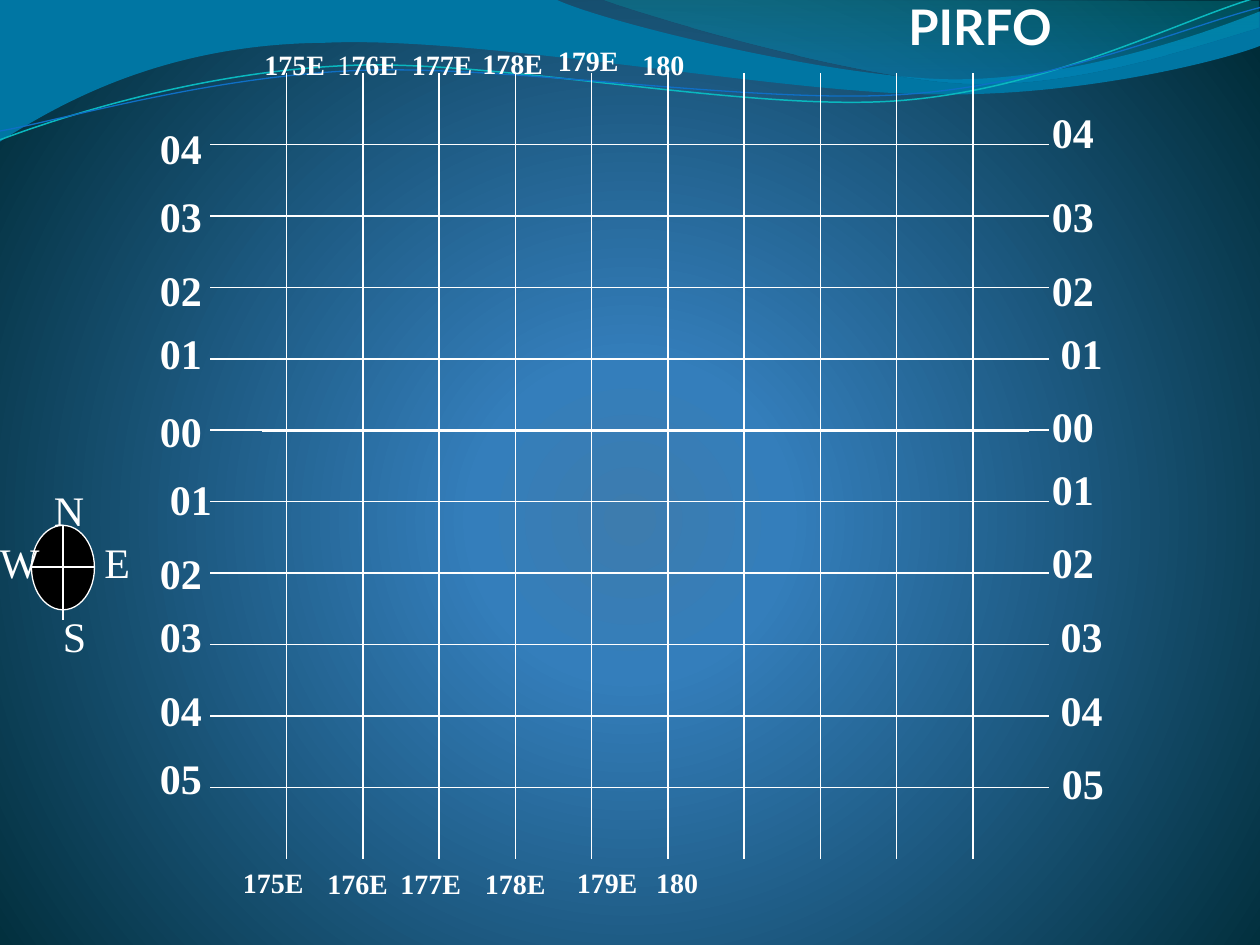
from typing import NamedTuple

from lxml import etree
from pptx import Presentation, util as u
from pptx.dml.color import RGBColor
from pptx.enum import shapes, text
from pptx.oxml import parse_xml
from pptx.oxml.ns import nsdecls, qn

PX = 9144  # EMU per px, 100 px to the inch
WHITE = RGBColor(0xFF, 0xFF, 0xFF)
BLACK = RGBColor(0x00, 0x00, 0x00)
WAVE_BLUE = RGBColor(0x00, 0x76, 0xA3)
CYAN = RGBColor(0x0A, 0xB8, 0xBF)
ROYAL = RGBColor(0x0F, 0x6F, 0xC6)
GLOW = RGBColor(0x3D, 0x7C, 0xAE)
MID_BLUE = RGBColor(0x34, 0x7E, 0xBB)
NIGHT = RGBColor(0x00, 0x2C, 0x38)
TEAL = RGBColor(0x00, 0xA1, 0xA9)
SKY = RGBColor(0x00, 0x8B, 0xBF)
SERIF = "Times New Roman"
GRID_SIZE = 11


class Stop(NamedTuple):
    percent: int
    color: RGBColor
    alpha: int = 100


class Wave(NamedTuple):
    """Start point, then segments of 2 (line) or 6 (Bezier) px coordinates."""
    start: tuple[int, int]
    segments: list[tuple[int, ...]]
    fill: RGBColor | None = None
    line: RGBColor | None = None
    weight: float = 0


class Label(NamedTuple):
    """Bold text whose first `plain` letters stay regular."""
    left: int
    top: int
    width: int
    words: str
    size: int
    wrap: bool = True
    plain: int = 0


WAVES = [
    Wave((0, -1), [(440, -1), (476, 17, 664, 63, 758, 63), (853, 63, 958, 26, 1000, 9),
                   (1001, 36), (983, 44, 870, 76, 746, 75), (622, 75, 382, 28, 257, 34),
                   (129, 35, 46, 83, -1, 113)], fill=WAVE_BLUE),
    Wave((478, 0), [(509, 12, 681, 63, 768, 66), (855, 70, 961, 33, 999, 22), (999, 1)],
         fill=TEAL),
    Wave((0, 111), [(48, 93, 158, 57, 277, 52), (395, 47, 593, 89, 713, 80),
                    (833, 71, 938, 15, 998, -2)], line=CYAN, weight=0.85),
    Wave((0, 104), [(47, 96, 164, 61, 283, 56), (403, 51, 597, 83, 717, 75),
                    (836, 67, 941, 21, 1000, 6)], line=ROYAL, weight=0.75),
]
LABELS = [
    # longitudes, top
    Label(200, 33, 68, "175E", 16), Label(258, 33, 77, "176E", 16, plain=1),
    Label(317, 33, 68, "177E", 16), Label(373, 32, 68, "178E", 16, wrap=False),
    Label(433, 30, 102, "179E", 16), Label(500, 33, 83, "180", 16),
    # longitudes, bottom
    Label(183, 682, 83, "175E", 16), Label(250, 683, 77, "176E", 16),
    Label(308, 683, 100, "177E", 16), Label(375, 683, 92, "178E", 16),
    Label(448, 682, 68, "179E", 16, wrap=False), Label(511, 682, 81, "180", 16),
    # latitudes, left
    Label(117, 92, 62, "04", 24), Label(117, 146, 68, "03", 24),
    Label(117, 205, 68, "02", 24), Label(117, 255, 60, "01", 24),
    Label(117, 317, 60, "00", 24), Label(125, 371, 68, "01", 24),
    Label(117, 430, 68, "02", 24), Label(117, 480, 77, "03", 24),
    Label(117, 538, 68, "04", 24), Label(117, 592, 60, "05", 24),
    # latitudes, right
    Label(825, 80, 75, "04", 24), Label(825, 146, 75, "03", 24),
    Label(825, 205, 58, "02", 24), Label(832, 255, 53, "01", 24, wrap=False),
    Label(825, 313, 67, "00", 24), Label(825, 363, 75, "01", 24),
    Label(825, 421, 67, "02", 24), Label(832, 480, 53, "03", 24, wrap=False),
    Label(832, 538, 53, "04", 24, wrap=False), Label(833, 596, 67, "05", 24),
]
COMPASS_LETTERS = [
    Label(33, 380, 51, "N", 24, plain=1), Label(73, 421, 40, "E", 24, False, 1),
    Label(40, 480, 39, "S", 24, False, 1), Label(-10, 421, 52, "W", 24, False, 1),
]


def px(*lengths: int) -> list[u.Emu]:
    return [u.Emu(length * PX) for length in lengths]


def set_gradient(fill, owner, stops: list[Stop], shade: str) -> None:
    """Give the fill inside the XML element `owner` a gradient with the given shading."""
    fill.solid()
    solid = next(owner.iter(qn("a:solidFill")))
    marks = "".join(
        f'<a:gs pos="{stop.percent * 1000}"><a:srgbClr val="{stop.color}">'
        f'<a:alpha val="{stop.alpha * 1000}"/></a:srgbClr></a:gs>' for stop in stops)
    solid.getparent().replace(solid, parse_xml(
        f'<a:gradFill rotWithShape="1" {nsdecls("a")}><a:gsLst>{marks}</a:gsLst>'
        f'{shade}</a:gradFill>'))


def bend(shape, segments: list[tuple[int, ...]]) -> None:
    """Merge the three straight steps of each Bezier segment into one curve."""
    steps = iter(list(shape._element.iter(qn("a:lnTo"))))
    for segment in segments:
        first = next(steps)
        if len(segment) == 6:
            first.tag = qn("a:cubicBezTo")
            for _ in range(2):
                step = next(steps)
                step.getparent().remove(step)
                first.append(step[0])


def draw_wave(page, wave: Wave):
    points = [segment[i:i + 2] for segment in wave.segments for i in range(0, len(segment), 2)]
    builder = page.shapes.build_freeform(*wave.start, scale=PX)
    builder.add_line_segments(points, close=wave.fill is not None)
    shape = builder.convert_to_shape()
    bend(shape, wave.segments)
    shape.shadow.inherit = False
    if wave.fill is None:
        shape.fill.background()
        shape.line.color.rgb = wave.line
        shape.line.width = u.Pt(wave.weight)
    else:
        shape.fill.solid()
        shape.fill.fore_color.rgb = wave.fill
        shape.line.fill.background()
    return shape


def draw_ring(page) -> None:
    ring = page.shapes.add_shape(shapes.MSO_SHAPE.DONUT, *px(-6, -3, 88, 87))
    ring.adjustments[0] = 0.175
    ring.shadow.inherit = False
    ring.fill.solid()
    ring.fill.fore_color.rgb = WAVE_BLUE
    ring.line.fill.background()


def draw_title(page, words: str) -> None:
    title = page.shapes.title
    title.left, title.top, title.width, title.height = px(711, -8, 150, 57)
    frame = title.text_frame
    frame.text = words
    frame.vertical_anchor = text.MSO_ANCHOR.TOP
    frame.auto_size = text.MSO_AUTO_SIZE.NONE
    para = frame.paragraphs[0]
    para.alignment = text.PP_ALIGN.LEFT
    para.font.name, para.font.size, para.font.bold = "Lato", u.Pt(28), True
    para.font.color.rgb = WHITE
    page.shapes._spTree.append(title._element)  # in front of the waves


def set_border(cell, side: str, visible: bool) -> None:
    border = etree.SubElement(cell._tc.get_or_add_tcPr(), qn(f"a:ln{side}"), w=str(u.Pt(1)))
    if visible:
        paint = etree.SubElement(border, qn("a:solidFill"))
        etree.SubElement(paint, qn("a:srgbClr"), val=str(WHITE))
    else:
        etree.SubElement(border, qn("a:noFill"))


def draw_grid(page) -> None:
    """Table ruled on the inside only."""
    table = page.shapes.add_table(GRID_SIZE, GRID_SIZE, *px(167, 58, 666, 624)).table
    table.first_row = table.horz_banding = False
    last = GRID_SIZE - 1
    for row in range(GRID_SIZE):
        for column in range(GRID_SIZE):
            cell = table.cell(row, column)
            inner = {"L": column > 0, "R": column < last, "T": row > 0, "B": row < last}
            for side, visible in inner.items():
                set_border(cell, side, visible)
            cell.fill.background()


def draw_label(page, label: Label) -> None:
    height = 37 if label.size == 16 else 50
    box = page.shapes.add_textbox(*px(label.left, label.top, label.width, height))
    frame = box.text_frame
    frame.word_wrap = label.wrap
    frame.auto_size = text.MSO_AUTO_SIZE.SHAPE_TO_FIT_TEXT
    para = frame.paragraphs[0]
    para.font.name, para.font.size = SERIF, u.Pt(label.size)
    para.font.color.rgb = WHITE
    for words, bold in ((label.words[:label.plain], False), (label.words[label.plain:], True)):
        if words:
            span = para.add_run()
            span.text, span.font.bold = words, bold


def draw_line(page, *ends: int) -> None:
    line = page.shapes.add_connector(shapes.MSO_CONNECTOR.STRAIGHT, *px(*ends))
    line.line.color.rgb = WHITE
    line.line.width = u.Pt(0.75)
    etree.SubElement(line._element.spPr, qn("a:effectLst"))


def draw_compass(page) -> None:
    dial = page.shapes.add_shape(shapes.MSO_SHAPE.OVAL, *px(25, 417, 50, 67))
    dial.shadow.inherit = False
    dial.fill.solid()
    dial.fill.fore_color.rgb = BLACK
    dial.line.color.rgb = WHITE
    dial.line.width = u.Pt(0.75)
    draw_line(page, 50, 417, 50, 492)
    draw_line(page, 25, 450, 75, 450)
    for letter in COMPASS_LETTERS:
        draw_label(page, letter)


def main() -> None:
    deck = Presentation()
    deck.slide_width, deck.slide_height = px(1000, 750)
    page = deck.slides.add_slide(deck.slide_layouts[5])
    set_gradient(page.background.fill, page._element,
                 [Stop(0, GLOW), Stop(20, MID_BLUE), Stop(100, NIGHT)],
                 '<a:path path="circle"><a:fillToRect l="10000" t="110000" '
                 'r="10000" b="100000"/></a:path>')
    _, veil, *_ = [draw_wave(page, wave) for wave in WAVES]
    set_gradient(veil.fill, veil._element, [Stop(0, TEAL, 30), Stop(80, SKY, 45)],
                 '<a:lin ang="5400000" scaled="0"/>')
    draw_ring(page)
    draw_title(page, "PIRFO")
    draw_grid(page)
    for label in LABELS:
        draw_label(page, label)
    draw_compass(page)
    draw_line(page, 208, 342, 817, 342)  # equator
    deck.save("out.pptx")


if __name__ == "__main__":
    main()
